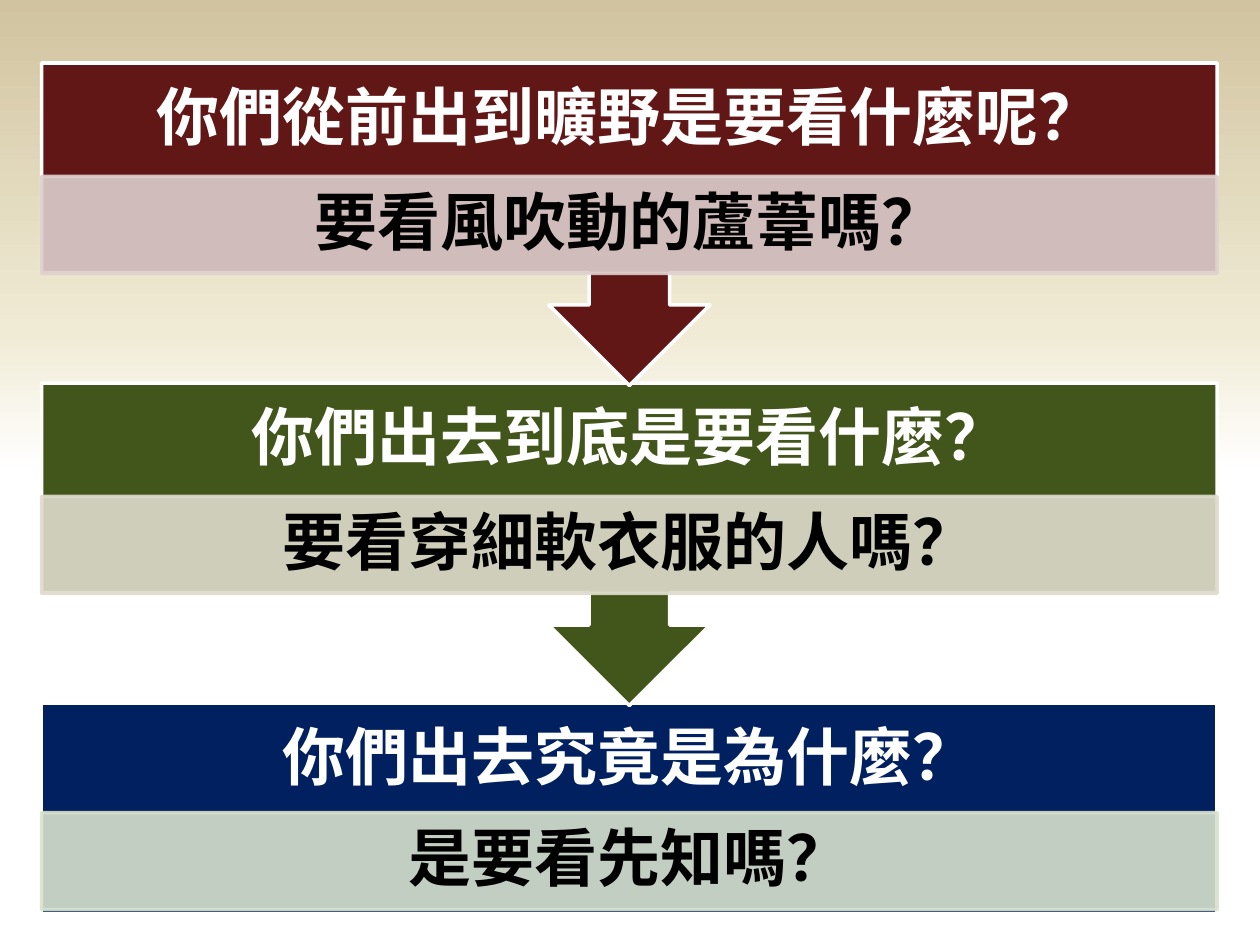
from copy import deepcopy

from lxml.etree import SubElement
from pptx import Presentation
from pptx.dml.color import RGBColor
from pptx.enum.shapes import MSO_SHAPE as SHAPE
from pptx.enum.text import MSO_ANCHOR as ANCHOR, PP_ALIGN as ALIGN
from pptx.oxml.ns import qn
from pptx.util import Inches, Pt

FONT = "Noto Sans CJK SC"
BACKGROUND = [(0.5, "FFFFFF"), (0.65, "F0EBD5"), (1, "D1C39F")]
STEPS = [
    ("你們從前出到曠野是要看什麼呢？", "要看風吹動的蘆葦嗎？", "621717", "DDCFCC"),
    ("你們出去到底是要看什麼？", "要看穿細軟衣服的人嗎？", "42551A", "DFDCCD"),
    ("你們出去究竟是為什麼？", "是要看先知嗎？", "002060", "D9E2CE"),
]
LEFT, TOP, WIDTH, PITCH = 0.33, 0.5, 9.33, 2.54
CALLOUT_HEIGHT, LAST_HEIGHT = 2.56, 1.67
QUESTION_HEIGHT, ANSWER_HEIGHT = 0.9, 0.77
ANSWER_OFFSET, LAST_ANSWER_OFFSET = 0.9, 0.87


def rgb(color):
    return RGBColor.from_string(color)


def paint_background(slide):
    fill = slide.background.fill
    fill.gradient()
    fill.gradient_angle = 90
    stop_list = fill.gradient_stops[0]._gs.getparent()
    stop_list.insert(1, deepcopy(stop_list[0]))
    for stop, (position, color) in zip(fill.gradient_stops, BACKGROUND):
        stop.position = position
        stop.color.rgb = rgb(color)


def add_block(slide, kind, top, height, fill, line, opacity=None):
    shape = slide.shapes.add_shape(
        kind, Inches(LEFT), Inches(top), Inches(WIDTH), Inches(height))
    shape.shadow.inherit = False
    shape.fill.solid()
    shape.fill.fore_color.rgb = rgb(fill)
    shape.line.color.rgb = rgb(line)
    shape.line.width = Pt(2)
    if opacity is not None:
        for color in shape._element.spPr.iter(qn("a:srgbClr")):
            SubElement(color, qn("a:alpha"), val=str(opacity * 1000))
    return shape


def write(shape, text, color, vertical_inset):
    frame = shape.text_frame
    frame.text = text
    frame.word_wrap = True
    frame.vertical_anchor = ANCHOR.MIDDLE
    frame.margin_left = frame.margin_right = Inches(0.28)
    frame.margin_top = frame.margin_bottom = Inches(vertical_inset)
    paragraph = frame.paragraphs[0]
    paragraph.alignment = ALIGN.CENTER
    paragraph.line_spacing = 0.9
    paragraph.space_after = Pt(12.6)
    run = paragraph.runs[0]
    run.font.size = Pt(36)
    run.font.bold = True
    run.font.name = FONT
    run.font.color.rgb = rgb(color)
    SubElement(run.font._element, qn("a:ea"), typeface=FONT)


def add_step(slide, index):
    question, answer, dark, light = STEPS[index]
    top = TOP + index * PITCH
    if index == len(STEPS) - 1:
        add_block(slide, SHAPE.RECTANGLE, top, LAST_HEIGHT, dark, "FFFFFF")
        answer_top = top + LAST_ANSWER_OFFSET
    else:
        callout = add_block(slide, SHAPE.UP_ARROW_CALLOUT, top, CALLOUT_HEIGHT, dark, "FFFFFF")
        callout.rotation = 180
        answer_top = top + ANSWER_OFFSET
    heading = slide.shapes.add_textbox(
        Inches(LEFT), Inches(top), Inches(WIDTH), Inches(QUESTION_HEIGHT))
    write(heading, question, "FFFFFF", 0.28)
    band = add_block(slide, SHAPE.RECTANGLE, answer_top, ANSWER_HEIGHT, light, light, 90)
    write(band, answer, "000000", 0.05)


def main():
    presentation = Presentation()
    presentation.slide_width = Inches(10)
    presentation.slide_height = Inches(7.5)
    slide = presentation.slides.add_slide(presentation.slide_layouts[6])
    paint_background(slide)
    for index in reversed(range(len(STEPS))):
        add_step(slide, index)
    presentation.save("out.pptx")


if __name__ == "__main__":
    main()
